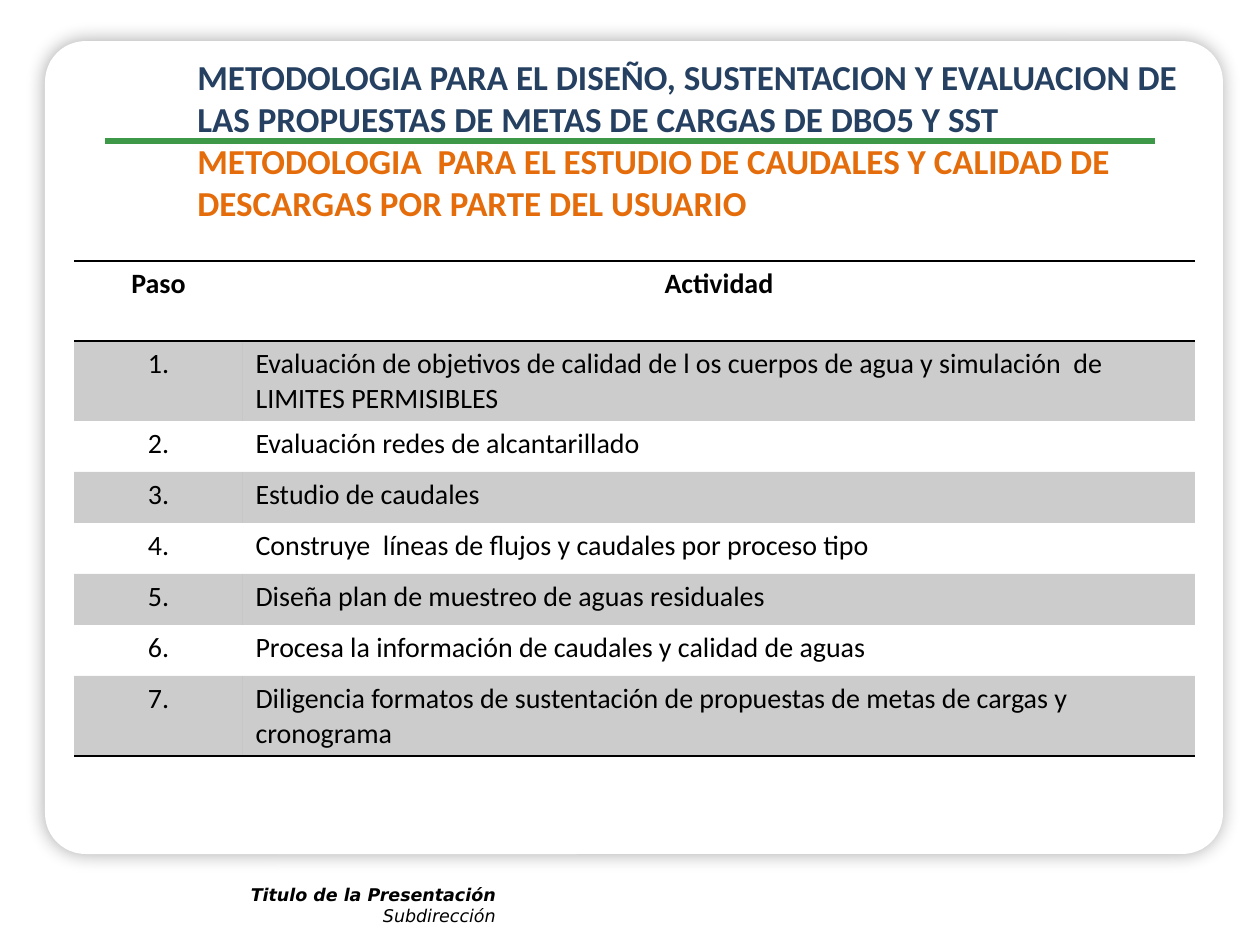
from lxml import etree
from pptx import Presentation, util as u
from pptx.dml.color import RGBColor
from pptx.enum import shapes, text
from pptx.oxml import ns, parse_xml

# Content
TITLE = [
    ("METODOLOGIA PARA EL DISEÑO, SUSTENTACION Y EVALUACION DE LAS PROPUESTAS "
     "DE METAS DE CARGAS DE DBO5 Y SST", "navy"),
    ("METODOLOGIA  PARA EL ESTUDIO DE CAUDALES Y CALIDAD DE DESCARGAS "
     "POR PARTE DEL USUARIO", "orange"),
]
HEAD = ("Paso", "Actividad")
STEPS = [
    "Evaluación de objetivos de calidad de l os cuerpos de agua y simulación  de "
    "LIMITES PERMISIBLES",
    "Evaluación redes de alcantarillado",
    "Estudio de caudales",
    "Construye  líneas de flujos y caudales por proceso tipo",
    "Diseña plan de muestreo de aguas residuales",
    "Procesa la información de caudales y calidad de aguas",
    "Diligencia formatos de sustentación de propuestas de metas de cargas y cronograma",
]
FOOT = [("Titulo de la Presentación", True), ("Subdirección", False)]

# Theme and layout, in px
THEME = {
    "white": "FFFFFF", "black": "000000", "green": "3D9948",
    "navy": "254061", "orange": "E46C0A",
    "body": "Calibri", "foot": "DejaVu Sans",
    "title_pt": 20, "table_pt": 16, "foot_pt": 10,
}
PX = 914400 / 126
CARD = (45, 41, 1178, 813)
RULE = (105, 138, 1050, 6)
TITLE_BOX = (185, 49, 1011, 147)
FOOT_BOX = (101, 878, 407, 56)
TABLE_AT = (74, 261)
COLS = (169, 952)
TALL, LOW = 80, 51
WRAPPED = {0, 1, len(STEPS)}  # rows of double height
NO_STYLE = "{2D5ABB26-0587-4C30-8999-92F81FD0307C}"


def emu(*vals):
    return [u.Emu(round(v * PX)) for v in vals]


def rgb(name):
    return RGBColor.from_string(THEME[name])


def style(font, **fmt):
    font.color.rgb = rgb(fmt.pop("color", "black"))
    for key, val in fmt.items():
        setattr(font, key, val)


def child(node, tag, **attrs):
    return etree.SubElement(node, ns.qn(tag), attrs)


def block(slide, kind, box, fill):
    shape = slide.shapes.add_shape(kind, *emu(*box))
    shape.shadow.inherit = False
    shape.fill.solid()
    shape.fill.fore_color.rgb = rgb(fill)
    shape.line.fill.background()
    return shape


def textbox(slide, box):
    frame = slide.shapes.add_textbox(*emu(*box)).text_frame
    frame.word_wrap = True
    return frame


def edge(cell, side):
    line = child(cell._tc.get_or_add_tcPr(), f"a:{side}", w="12700")
    child(child(line, "a:solidFill"), "a:srgbClr", val=THEME["black"])


def shade(cell):
    cell.fill.solid()
    cell.fill.fore_color.rgb = rgb("black")
    tint = cell._tc.tcPr.find(".//" + ns.qn("a:solidFill") + "[last()]")
    fill = cell._tc.tcPr.findall(ns.qn("a:solidFill"))[-1] if tint is not None else tint
    child(fill[0], "a:alpha", val="20000")


def frame_card(slide):
    card = block(slide, shapes.MSO_SHAPE.ROUNDED_RECTANGLE, CARD, "white")
    card.adjustments[0] = 0.05
    effects = card._element.spPr.find(ns.qn("a:effectLst"))
    glow = child(effects, "a:outerShdw", blurRad=str(u.Pt(10.8)), dist="0",
                 dir="5400000", algn="t", rotWithShape="0")
    child(child(glow, "a:srgbClr", val=THEME["black"]), "a:alpha", val="35000")
    block(slide, shapes.MSO_SHAPE.RECTANGLE, RULE, "green")


def footer(slide):
    frame = textbox(slide, FOOT_BOX)
    for i, (words, bold) in enumerate(FOOT):
        para = frame.add_paragraph() if i else frame.paragraphs[0]
        para.alignment = text.PP_ALIGN.RIGHT
        run = para.add_run()
        run.text = words
        style(run.font, name=THEME["foot"], size=u.Pt(THEME["foot_pt"]),
              bold=bold, italic=True)


def title(slide):
    para = textbox(slide, TITLE_BOX).paragraphs[0]
    for i, (words, color) in enumerate(TITLE):
        if i:
            para.add_line_break()
        run = para.add_run()
        run.text = words
        style(run.font, name=THEME["body"], size=u.Pt(THEME["title_pt"]),
              bold=True, color=color)


def steps(slide):
    rows = [HEAD] + [(f"{n}.", words) for n, words in enumerate(STEPS, 1)]
    highs = [TALL if r in WRAPPED else LOW for r in range(len(rows))]
    shape = slide.shapes.add_table(len(rows), len(COLS),
                                   *emu(*TABLE_AT, sum(COLS), sum(highs)))
    table = shape.table
    table.first_row = table.horz_banding = False
    table._tbl.tblPr.find(ns.qn("a:tableStyleId")).text = NO_STYLE
    for col, wide in zip(table.columns, emu(*COLS)):
        col.width = wide
    for r, (row, high) in enumerate(zip(table.rows, emu(*highs))):
        row.height = high
        for c, cell in enumerate(row.cells):
            if r == 0:
                edge(cell, "lnT")
            if r in (0, len(STEPS)):
                edge(cell, "lnB")
            if r % 2:
                shade(cell)
            else:
                cell.fill.background()
            para = cell.text_frame.paragraphs[0]
            centred = r == 0 or c == 0
            para.alignment = text.PP_ALIGN.CENTER if centred else text.PP_ALIGN.LEFT
            run = para.add_run()
            run.text = rows[r][c]
            style(run.font, name=THEME["body"], size=u.Pt(THEME["table_pt"]),
                  bold=r == 0)


def main():
    deck = Presentation()
    deck.slide_width, deck.slide_height = u.Inches(10), u.Inches(7.5)
    slide = deck.slides.add_slide(deck.slide_layouts[6])
    frame_card(slide)
    footer(slide)
    title(slide)
    steps(slide)
    deck.save("out.pptx")


if __name__ == "__main__":
    main()
